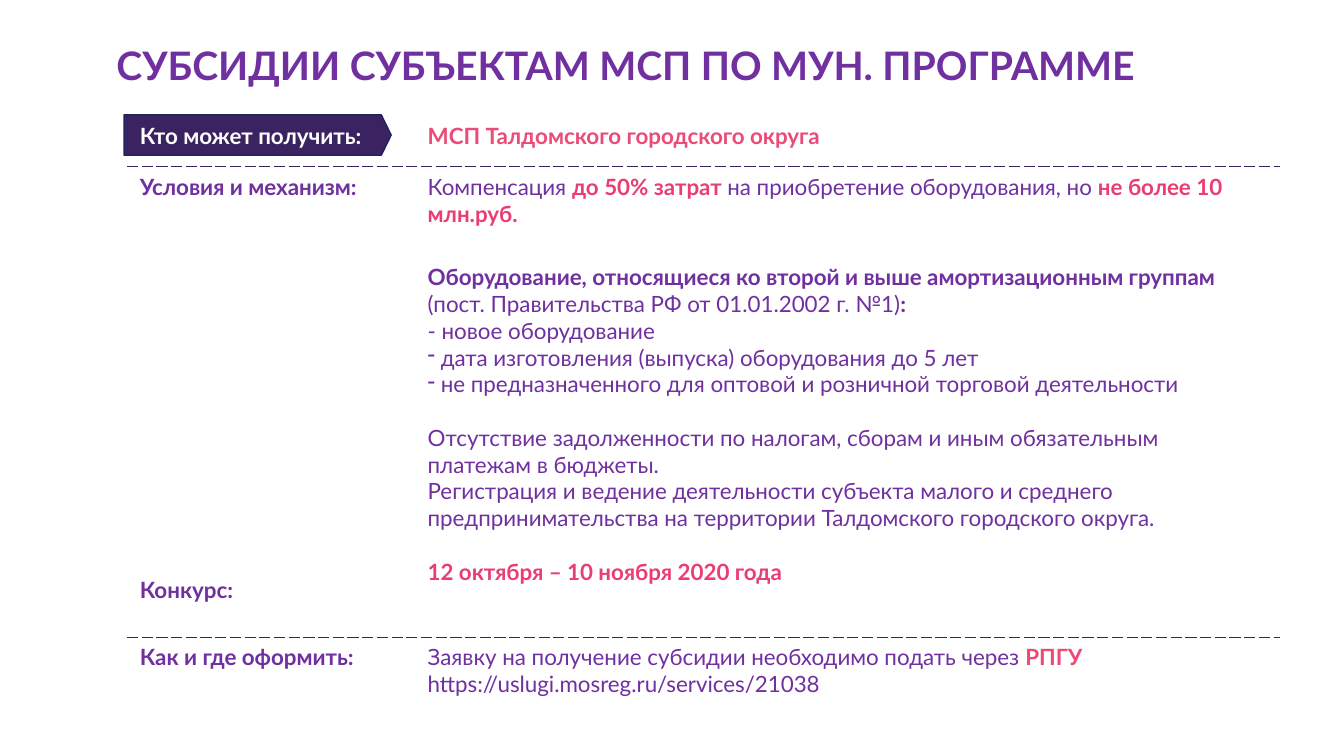
"""Build the slide on subsidies for small and medium businesses."""
from dataclasses import dataclass

from lxml.etree import SubElement
from pptx import Presentation
from pptx.dml.color import RGBColor
from pptx.enum.shapes import MSO_SHAPE
from pptx.enum.text import MSO_ANCHOR, MSO_AUTO_SIZE, PP_ALIGN
from pptx.oxml.ns import qn
from pptx.util import Pt


@dataclass(frozen=True)
class Theme:
    font: str = "Lato"
    title_size: float = 28
    body_size: float = 16
    purple: str = "7030A0"
    pink: str = "EA3E72"
    rose: str = "EB4B76"
    dark: str = "3B2362"
    navy: str = "1C235F"
    white: str = "FFFFFF"


THEME = Theme()
PLAIN = (THEME.purple, False)
STRONG = (THEME.purple, True)
ACCENT = (THEME.pink, True)
ROSE = (THEME.rose, True)
LIGHT = (THEME.white, True)

TITLE = "СУБСИДИИ СУБЪЕКТАМ МСП ПО МУН. ПРОГРАММЕ"
LINE_GAP = 19.2

# Each paragraph is (space before, bullet, [(text, style), ...]).
ROWS = [
    (36, [(0, None, [("Кто может получить:", LIGHT)])],
     [(0, None, [("МСП Талдомского городского округа", ROSE)])]),
    (336.2, [
        (0, None, [("Условия и механизм: ", STRONG)]),
        (14 * LINE_GAP, None, [("Конкурс:", STRONG)]),
    ], [
        (0, None, [
            ("Компенсация ", PLAIN),
            ("до 50% затрат ", ACCENT),
            ("на приобретение оборудования, но ", PLAIN),
            ("не более 10 млн.руб.", ACCENT),
        ]),
        (26.4, None, [
            ("Оборудование, относящиеся ко второй и выше амортизационным группам ", STRONG),
            ("(пост. Правительства РФ от 01.01.2002 г. №1)", PLAIN),
            (":", STRONG),
        ]),
        (0, None, [("- новое оборудование", PLAIN)]),
        (0, "-", [(" дата изготовления (выпуска) оборудования до 5 лет", PLAIN)]),
        (0, "-", [(" не предназначенного для оптовой и розничной торговой деятельности", PLAIN)]),
        (LINE_GAP, None, [("Отсутствие задолженности по налогам, сборам и иным "
                           "обязательным платежам в бюджеты.", PLAIN)]),
        (0, None, [("Регистрация и ведение деятельности субъекта малого и среднего "
                    "предпринимательства на территории Талдомского городского округа.", PLAIN)]),
        (LINE_GAP, None, [("12 октября – 10 ноября 2020 года", ACCENT)]),
    ]),
    (61.9, [(0, None, [("Как и где оформить:", STRONG)])],
     [(0, None, [
         ("Заявку на получение субсидии необходимо подать через ", PLAIN),
         ("РПГУ ", ROSE),
         ("https://uslugi.mosreg.ru/services/21038", PLAIN),
     ])]),
]
COLUMN_WIDTHS = (205.6, 618.1)
COLUMN_ALIGNMENTS = (PP_ALIGN.JUSTIFY, PP_ALIGN.LEFT)


def add_run(paragraph, text, style, size=THEME.body_size):
    color, bold = style
    run = paragraph.add_run()
    run.text = text
    run.font.name = THEME.font
    run.font.size = Pt(size)
    run.font.bold = bold
    run.font.color.rgb = RGBColor.from_string(color)


def write_paragraphs(frame, paragraphs, alignment):
    for index, (space_before, bullet, runs) in enumerate(paragraphs):
        paragraph = frame.paragraphs[0] if index == 0 else frame.add_paragraph()
        paragraph.alignment = alignment
        if space_before:
            paragraph.space_before = Pt(space_before)
        if bullet:
            properties = paragraph._p.get_or_add_pPr()
            properties.set("marL", "0")
            properties.set("indent", "0")
            SubElement(properties, qn("a:buChar"), char=bullet)
        for text, style in runs:
            add_run(paragraph, text, style)


def set_borders(cell, dashed_sides):
    properties = cell._tc.get_or_add_tcPr()
    for side in "LRTB":
        line = SubElement(properties, qn(f"a:ln{side}"), w=str(Pt(0.5)))
        if side in dashed_sides:
            fill = SubElement(line, qn("a:solidFill"))
            SubElement(fill, qn("a:srgbClr"), val=THEME.dark)
            SubElement(line, qn("a:prstDash"), val="dash")
        else:
            SubElement(line, qn("a:noFill"))


def add_label_plate(slide):
    plate = slide.shapes.add_shape(
        MSO_SHAPE.PENTAGON, Pt(88.6), Pt(82.1), Pt(190.8), Pt(28.8))
    plate.adjustments[0] = 0.244
    plate.shadow.inherit = False
    plate.fill.solid()
    plate.fill.fore_color.rgb = RGBColor.from_string(THEME.dark)
    plate.line.color.rgb = RGBColor.from_string(THEME.navy)
    plate.line.width = Pt(1)


def add_title(slide):
    frame = slide.shapes.add_textbox(Pt(25.9), Pt(25.9), Pt(841.7), Pt(41)).text_frame
    frame.word_wrap = True
    frame.auto_size = MSO_AUTO_SIZE.SHAPE_TO_FIT_TEXT
    frame.margin_left = frame.margin_right = 0
    paragraph = frame.paragraphs[0]
    paragraph.alignment = PP_ALIGN.CENTER
    add_run(paragraph, TITLE, STRONG, THEME.title_size)


def add_terms_table(slide):
    heights = [row[0] for row in ROWS]
    table = slide.shapes.add_table(
        len(ROWS), len(COLUMN_WIDTHS), Pt(90.7), Pt(82.8),
        Pt(sum(COLUMN_WIDTHS)), Pt(sum(heights))).table
    table.first_row = False
    table.horz_banding = False
    for column, width in zip(table.columns, COLUMN_WIDTHS):
        column.width = Pt(width)
    for row_index, (height, *contents) in enumerate(ROWS):
        table.rows[row_index].height = Pt(height)
        dashed_sides = ("T" if row_index > 0 else "") + (
            "B" if row_index < len(ROWS) - 1 else "")
        for column_index, paragraphs in enumerate(contents):
            cell = table.cell(row_index, column_index)
            set_borders(cell, dashed_sides)
            cell.fill.background()
            cell.vertical_anchor = MSO_ANCHOR.TOP
            cell.margin_left = cell.margin_right = Pt(9.2)
            cell.margin_top = cell.margin_bottom = Pt(5)
            write_paragraphs(cell.text_frame, paragraphs, COLUMN_ALIGNMENTS[column_index])


def main():
    presentation = Presentation()
    presentation.slide_width = Pt(960)
    presentation.slide_height = Pt(540)
    slide = presentation.slides.add_slide(presentation.slide_layouts[6])
    add_label_plate(slide)
    add_title(slide)
    add_terms_table(slide)
    presentation.save("out.pptx")


if __name__ == "__main__":
    main()
